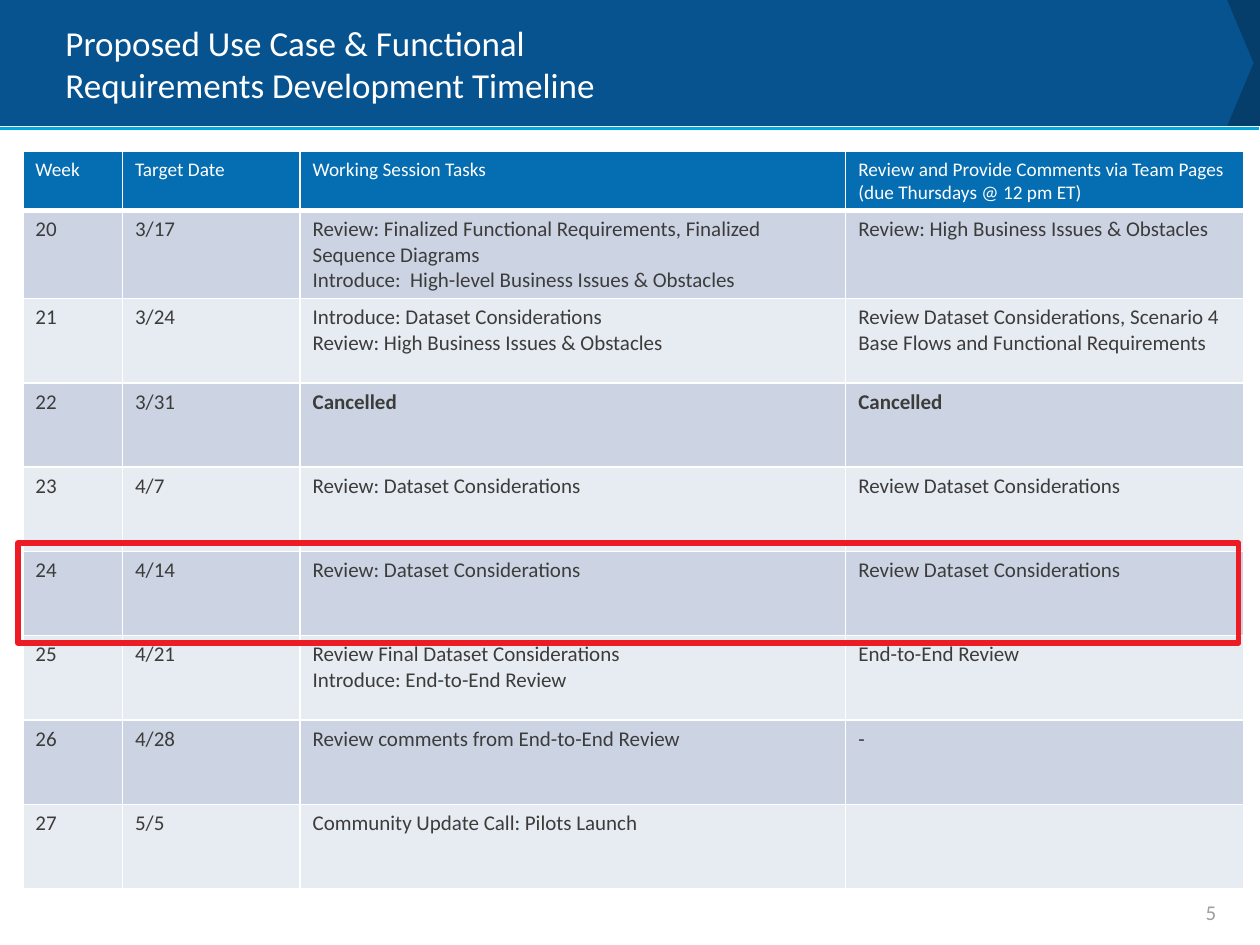
"""Build the development timeline slide with its weekly task table."""
from lxml import etree
from pptx import Presentation, util as u
from pptx.dml.color import RGBColor
from pptx.enum import shapes, text
from pptx.oxml.ns import qn

FONT = "Calibri"
TITLE = "Proposed Use Case & Functional\nRequirements Development Timeline"
HEADER = ("Week", "Target Date", "Working Session Tasks",
          "Review and Provide Comments via Team Pages (due Thursdays @ 12 pm ET)")
WEEKS = [
    ("20", "3/17", "Review: Finalized Functional Requirements, Finalized Sequence Diagrams\n"
     "Introduce:  High-level Business Issues & Obstacles",
     "Review: High Business Issues & Obstacles"),
    ("21", "3/24", "Introduce: Dataset Considerations\nReview: High Business Issues & Obstacles",
     "Review Dataset Considerations, Scenario 4 Base Flows and Functional Requirements"),
    ("22", "3/31", "Cancelled", "Cancelled"),
    ("23", "4/7", "Review: Dataset Considerations", "Review Dataset Considerations"),
    ("24", "4/14", "Review: Dataset Considerations", "Review Dataset Considerations"),
    ("25", "4/21", "Review Final Dataset Considerations\nIntroduce: End-to-End Review",
     "End-to-End Review"),
    ("26", "4/28", "Review comments from End-to-End Review", "-"),
    ("27", "5/5", "Community Update Call: Pilots Launch", ""),
]
COLUMN_WIDTHS = (2.01, 3.58, 11, 8.03)
HEADER_HEIGHT, WEEK_HEIGHT = 1.14, 1.7
BANDS = ("CCD4E4", "E7EBF2")
BANNER = [((24.26, 0, 1.14, 2.54), 0, "053E6B"), ((0, 0, 25.27, 2.54), 0.21, "07538F")]


def colour(value):
    """Turn a hex string into a colour."""
    return RGBColor.from_string(value)


def style(frame, size, value, align=None, bold=False):
    """Set the font and alignment of every paragraph in a frame."""
    for para in frame.paragraphs:
        font = para.font
        font.name, font.size, font.bold = FONT, u.Pt(size), bold
        font.color.rgb = colour(value)
        if align is not None:
            para.alignment = align


def add_shape(page, kind, place):
    """Add a preset shape without a shadow."""
    shape = page.shapes.add_shape(kind, *map(u.Cm, place))
    shape.shadow.inherit = False
    return shape


def add_label(page, place, content, size, value, align):
    """Add a vertically centred text box."""
    box = page.shapes.add_textbox(*map(u.Cm, place))
    frame = box.text_frame
    frame.word_wrap = True
    frame.vertical_anchor = text.MSO_ANCHOR.MIDDLE
    frame.text = content
    style(frame, size, value, align)


def add_borders(cell, top, bottom):
    """Draw white borders around a cell, with widths in points."""
    properties = cell._tc.get_or_add_tcPr()
    for side, width in (("L", 1), ("R", 1), ("T", top), ("B", bottom)):
        line = etree.SubElement(properties, qn(f"a:ln{side}"), w=str(u.Pt(width)))
        fill = etree.SubElement(line, qn("a:solidFill"))
        etree.SubElement(fill, qn("a:srgbClr"), val="FFFFFF")


def add_banner(page):
    """Draw the title band and the line below it."""
    for place, point, value in BANNER:
        band = add_shape(page, shapes.MSO_SHAPE.PENTAGON, place)
        band.adjustments[0] = point
        band.fill.solid()
        band.fill.fore_color.rgb = colour(value)
        band.line.fill.background()
    rule = page.shapes.add_connector(
        shapes.MSO_CONNECTOR.STRAIGHT, 0, u.Cm(2.59), u.Cm(25.37), u.Cm(2.59))
    rule.line.color.rgb = colour("00A8E1")
    rule.line.width = u.Pt(2.25)
    etree.SubElement(rule._element.spPr, qn("a:effectLst"))


def add_timeline(page):
    """Draw the table of weeks."""
    rows = [HEADER, *WEEKS]
    heights = [HEADER_HEIGHT] + [WEEK_HEIGHT] * len(WEEKS)
    place = (0.46, 3.05, sum(COLUMN_WIDTHS), sum(heights))
    table = page.shapes.add_table(len(rows), len(HEADER), *map(u.Cm, place)).table
    for column, width in zip(table.columns, COLUMN_WIDTHS):
        column.width = u.Cm(width)
    for index, (entries, height) in enumerate(zip(rows, heights)):
        table.rows[index].height = u.Cm(height)
        heading = index == 0
        fill = "056DB1" if heading else BANDS[(index - 1) % 2]
        for number, entry in enumerate(entries):
            cell = table.cell(index, number)
            cell.text = entry
            style(cell.text_frame, 11 if heading else 12,
                  "FFFFFF" if heading else "3C3C3B", bold=entry == "Cancelled")
            add_borders(cell, 3 if index == 1 else 1, 3 if heading else 1)
            cell.fill.solid()
            cell.fill.fore_color.rgb = colour(fill)


def main():
    """Assemble and save the deck."""
    deck = Presentation()
    deck.slide_width, deck.slide_height = u.Cm(25.4), u.Cm(19.05)
    page = deck.slides.add_slide(deck.slide_layouts[6])
    add_banner(page)
    add_label(page, (1.07, 0.2, 23.29, 2.16), TITLE, 20, "FFFFFF", text.PP_ALIGN.LEFT)
    add_timeline(page)
    add_label(page, (18.85, 18.06, 5.92, 0.64), "5", 12, "9E9E9C", text.PP_ALIGN.RIGHT)
    highlight = add_shape(page, shapes.MSO_SHAPE.RECTANGLE, (0.36, 10.95, 24.61, 2.01))
    highlight.fill.background()
    highlight.line.color.rgb = colour("ED1C24")
    highlight.line.width = u.Pt(3.25)
    deck.save("out.pptx")


if __name__ == "__main__":
    main()
